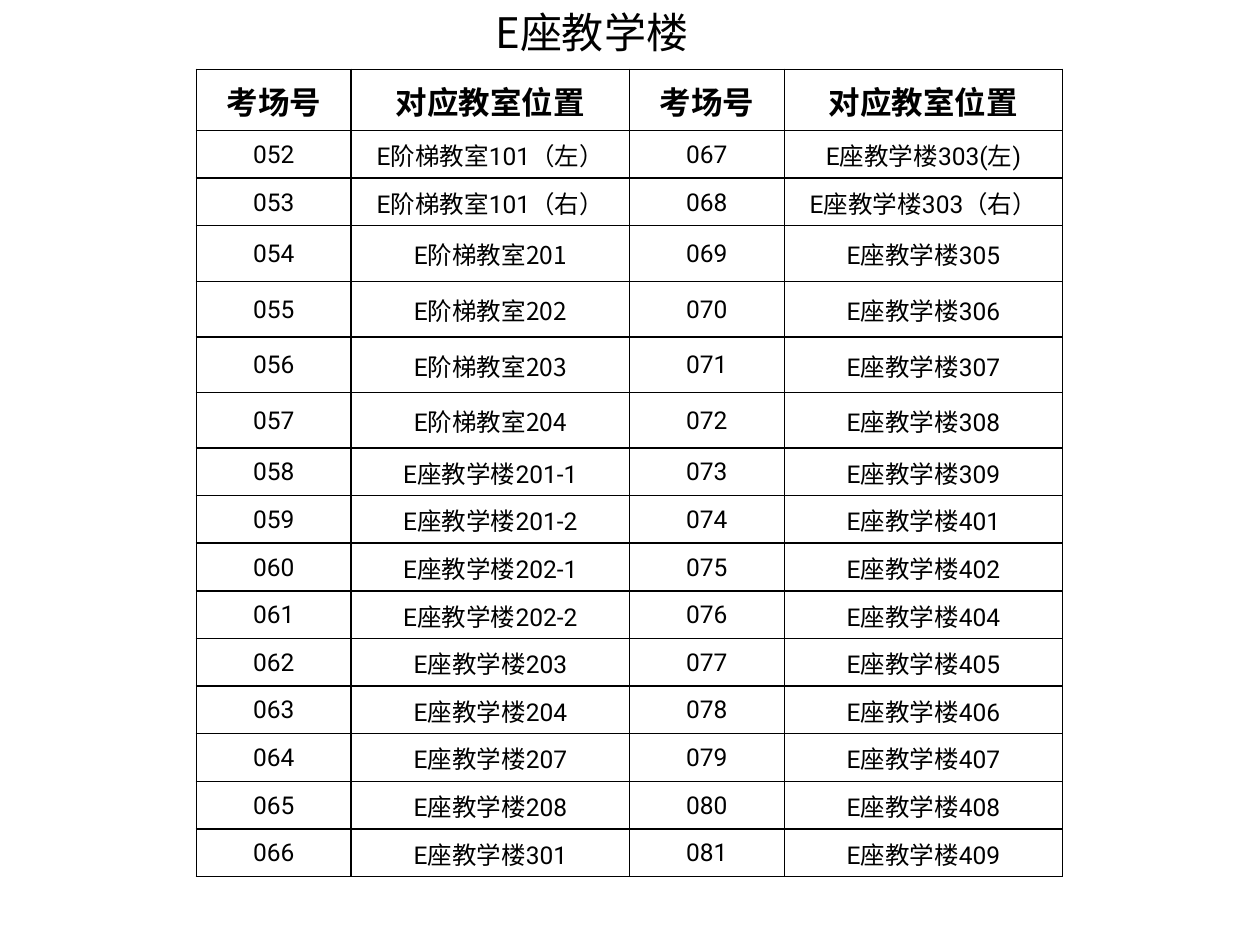
from lxml import etree
from pptx import Presentation
from pptx.dml.color import RGBColor
from pptx.enum.text import MSO_ANCHOR, MSO_AUTO_SIZE, PP_ALIGN
from pptx.oxml.ns import qn
from pptx.util import Cm, Pt

TOP, MID = MSO_ANCHOR.TOP, MSO_ANCHOR.MIDDLE
LEFT, CENTER = PP_ALIGN.LEFT, PP_ALIGN.CENTER
FIT = MSO_AUTO_SIZE.SHAPE_TO_FIT_TEXT
HAN, LATIN = "Noto Sans CJK SC", "Roboto"
BLACK = "000000"

TITLE = "E座教学楼"
HEADS = ["考场号", "对应教室位置"]
FIRST = 52
ROOMS = [
    ["E阶梯教室101（左）", "E阶梯教室101（右）",
     "E|阶梯教室201", "E|阶梯教室202", "E|阶梯教室203", "E|阶梯教室204",
     "E座教学楼201-1", "E座教学楼201-2", "E座教学楼202-1", "E座教学楼202-2",
     "E座教学楼203", "E座教学楼204", "E座教学楼207", "E座教学楼208",
     "E座教学楼301"],
    ["E座教学楼303(左)", "E座教学楼303（右）",
     "E座教学楼305", "E座教学楼306", "E座教学楼307", "E座教学楼308",
     "E座教学楼309", "E座教学楼401", "E座教学楼402", "E座教学楼404",
     "E座教学楼405", "E座教学楼406", "E座教学楼407", "E座教学楼408",
     "E座教学楼409"],
]
COLS = [3.12, 5.61] * 2
ROWS = [1.23] + [0.96] * 2 + [1.12] * 4 + [0.96] * 9
HEAD = {"size": Pt(18), "bold": True}
BODY = {"size": Pt(14), "bold": False}
CELL = {"vertical_anchor": MID, "margin_left": Cm(0.03),
        "margin_right": Cm(0.03), "margin_top": Cm(0.03), "margin_bottom": 0}


def apply(obj, vals):
    for key, val in vals.items():
        setattr(obj, key, val)


def color(font, code):
    font.color.rgb = RGBColor.from_string(code)


def write(para, text, face, form):
    run = para.add_run()
    run.text = text
    apply(run.font, {"name": face, **form})
    color(run.font, BLACK)
    east = etree.SubElement(run.font._element, qn("a:ea"))
    east.set("typeface", HAN)


def border(cell):
    props = cell._tc.get_or_add_tcPr()
    for side in ("lnL", "lnR", "lnT", "lnB"):
        line = etree.SubElement(props, qn("a:" + side), w=str(Pt(1)))
        fill = etree.SubElement(line, qn("a:solidFill"))
        etree.SubElement(fill, qn("a:srgbClr"), val=BLACK)


def add_title(slide):
    title = slide.shapes.title
    apply(title, {"left": Cm(9.73), "top": Cm(0),
                  "width": Cm(6.55), "height": Cm(1.27)})
    frame = title.text_frame
    apply(frame, {"vertical_anchor": TOP, "word_wrap": True, "auto_size": FIT})
    para = frame.paragraphs[0]
    para.alignment = LEFT
    write(para, TITLE, HAN, {"size": Pt(24), "bold": False})


def add_rooms(slide):
    count = len(ROOMS[0])
    grid = [HEADS * 2]
    for i in range(count):
        grid.append([text for j, block in enumerate(ROOMS)
                     for text in (f"{FIRST + j * count + i:03d}", block[i])])
    table = slide.shapes.add_table(len(ROWS), len(COLS), Cm(3.96), Cm(1.4),
                                   Cm(sum(COLS)), Cm(sum(ROWS))).table
    apply(table, {"first_row": False, "horz_banding": False})
    for col, width in zip(table.columns, COLS):
        col.width = Cm(width)
    for row, high in zip(table.rows, ROWS):
        row.height = Cm(high)
    for r, texts in enumerate(grid):
        for c, text in enumerate(texts):
            cell = table.cell(r, c)
            apply(cell, CELL)
            border(cell)
            cell.fill.background()
            para = cell.text_frame.paragraphs[0]
            para.alignment = CENTER
            faces = (LATIN, HAN) if r else (HAN,)
            for part, face in zip(text.split("|"), faces):
                write(para, part, face, BODY if r else HEAD)


def main():
    deck = Presentation()
    apply(deck, {"slide_width": Cm(25.4), "slide_height": Cm(19.05)})
    slide = deck.slides.add_slide(deck.slide_layouts[5])
    add_rooms(slide)
    add_title(slide)
    deck.save("out.pptx")


if __name__ == "__main__":
    main()
